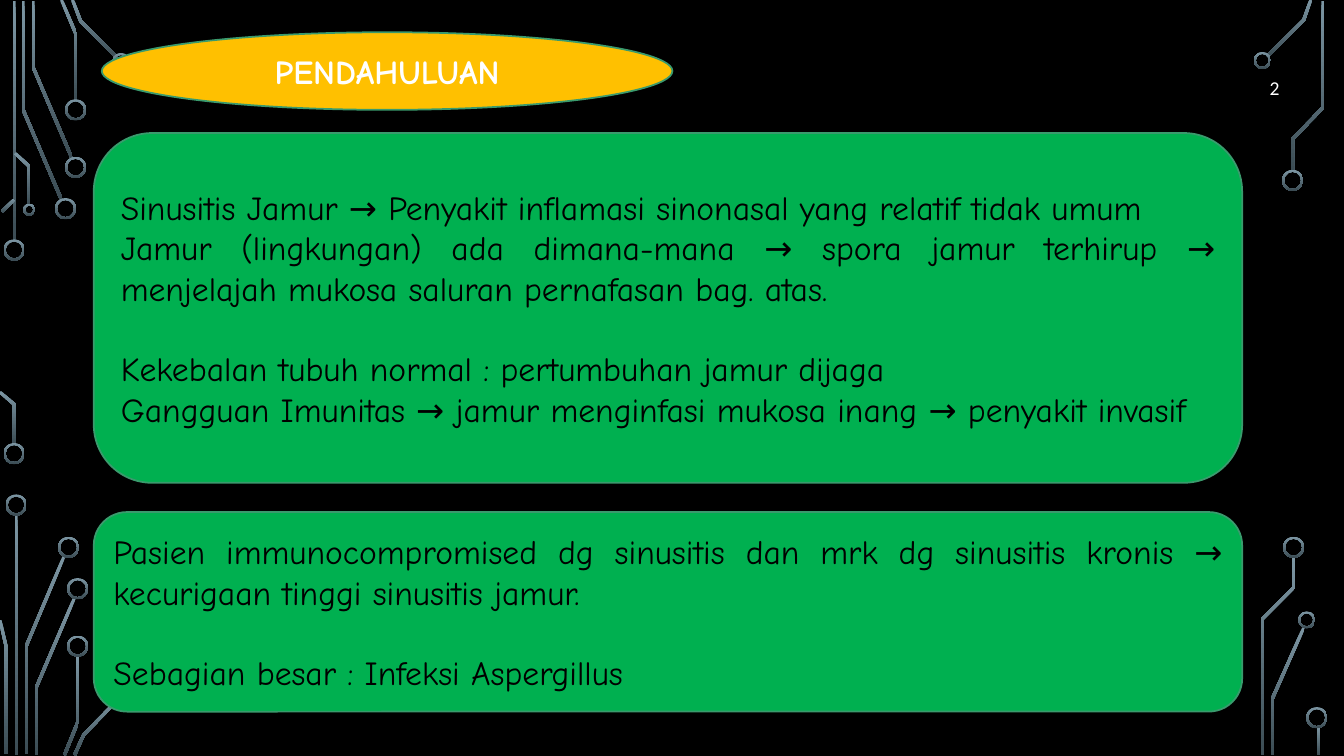
from dataclasses import dataclass
from math import hypot
from typing import NamedTuple

from pptx import Presentation
from pptx.dml.color import RGBColor
from pptx.dml.fill import FillFormat
from pptx.enum.shapes import MSO_SHAPE as Preset
from pptx.enum.text import MSO_ANCHOR as Anchor, PP_ALIGN as Align
from pptx.shapes.autoshape import Shape
from pptx.slide import Slide
from pptx.text.text import TextFrame
from pptx.util import Inches, Pt

COLUMNS, ROWS = 13.33, 7.5
CELL = Inches(1)
TRACK_WIDTH = 0.03
RING_BAND = 0.02


@dataclass(frozen=True)
class Theme:
    background: str = "000000"
    track_top: str = "7C96A3"
    track_bottom: str = "3B4C54"
    panel: str = "00B050"
    title: str = "FFC000"
    outline: str = "3A9A6D"
    dark_text: str = "000000"
    light_text: str = "FFFFFF"
    body_font: str = "Comic Neue"
    number_font: str = "Calibri"
    body_size: float = 24
    number_size: float = 14
    outline_width: float = 1.25
    section_gap: float = 28.8


class Point(NamedTuple):
    column: float
    row: float


class Area(NamedTuple):
    column: float
    row: float
    columns: float
    rows: float


class Ring(NamedTuple):
    column: float
    row: float
    diameter: float = 0.21


@dataclass(frozen=True)
class TextStyle:
    font: str
    size: float
    color: str
    align: Align
    bold: bool = False


@dataclass(frozen=True)
class Panel:
    """A filled shape whose text is split into sections of paragraphs."""
    preset: Preset
    area: Area
    fill: str
    style: TextStyle
    sections: list[list[str]]


THEME = Theme()
BODY = TextStyle(THEME.body_font, THEME.body_size, THEME.dark_text, Align.JUSTIFY)
TITLE = TextStyle(THEME.body_font, THEME.body_size, THEME.light_text, Align.CENTER, True)
NUMBER = TextStyle(THEME.number_font, THEME.number_size, THEME.light_text, Align.RIGHT)
NUMBER_AREA = Area(11.66, 0.54, 1.13, 0.65)

TRACKS = [
    # top left
    [(0.14, 0.01), (0.14, 2.4)],
    [(0.23, 0.01), (0.23, 1.09), (0.61, 1.98)],
    [(0.33, 0.01), (0.33, 0.67), (0.71, 1.56)],
    [(0.61, 0), (0.75, 0.33), (0.75, 1)],
    [(0.72, 0), (0.8, 0.21), (1.16, 0.57)],
    [(0.02, 2.1), (0.14, 1.98)],
    [(0.15, 1.52), (0.29, 1.65), (0.29, 2.03)],
    # bottom left
    [(0, 3.89), (0.14, 4.01), (0.14, 4.41)],
    [(0.16, 5.1), (0.16, 7.49)],
    [(0.64, 5.51), (0.26, 6.41), (0.26, 7.48)],
    [(0, 6.15), (0.06, 6.41), (0.06, 7.48)],
    [(0.74, 5.93), (0.36, 6.82), (0.36, 7.49)],
    [(0.77, 6.5), (0.77, 7.17), (0.64, 7.49)],
    [(1.18, 6.93), (0.83, 7.29), (0.74, 7.49)],
    # right
    [(13, 0), (12.93, 0.2), (12.57, 0.56)],
    [(13.12, 0.01), (13.12, 1.07), (12.82, 1.38), (12.82, 1.69)],
    [(12.93, 6.23), (12.62, 6.93), (12.62, 7.49)],
    [(12.83, 5.52), (12.83, 5.83), (12.52, 6.14), (12.52, 7.49)],
    [(13.08, 7.21), (13.08, 7.49)],
]
RINGS = [
    Ring(0.14, 2.48), Ring(0.14, 4.5), Ring(0.65, 2.07), Ring(0.75, 1.66),
    Ring(0.75, 1.09), Ring(1.2, 0.61, 0.17), Ring(0.29, 2.08, 0.12),
    Ring(0.16, 5.01), Ring(0.68, 5.43), Ring(0.77, 5.84), Ring(0.77, 6.41),
    Ring(12.52, 0.6, 0.17), Ring(12.82, 1.79), Ring(12.96, 6.15, 0.17),
    Ring(12.83, 5.43), Ring(13.06, 7.12),
]
PANELS = [
    Panel(Preset.ROUNDED_RECTANGLE, Area(0.93, 1.32, 11.39, 3.47), THEME.panel, BODY, [
        ["Sinusitis Jamur → Penyakit inflamasi sinonasal yang relatif tidak umum",
         "Jamur (lingkungan) ada dimana-mana → spora jamur terhirup → "
         "menjelajah mukosa saluran pernafasan bag. atas."],
        ["Kekebalan tubuh normal : pertumbuhan jamur dijaga",
         "Gangguan Imunitas → jamur menginfasi mukosa inang → penyakit invasif"],
    ]),
    Panel(Preset.ROUNDED_RECTANGLE, Area(0.93, 5.08, 11.39, 1.98), THEME.panel, BODY, [
        ["Pasien immunocompromised dg sinusitis dan mrk dg sinusitis kronis → "
         "kecurigaan tinggi sinusitis jamur."],
        ["Sebagian besar : Infeksi Aspergillus"],
    ]),
    Panel(Preset.OVAL, Area(1.01, 0.32, 5.66, 0.77), THEME.title, TITLE, [["PENDAHULUAN"]]),
]


def cells(*lengths: float) -> list[int]:
    return [round(length * CELL) for length in lengths]


def paint(fill: FillFormat, color: str) -> None:
    fill.solid()
    fill.fore_color.rgb = RGBColor.from_string(color)


def finish_circuit(shape: Shape) -> None:
    shape.shadow.inherit = False
    shape.line.fill.background()
    shape.fill.gradient()
    shape.fill.gradient_angle = 270
    for stop, color in zip(shape.fill.gradient_stops, (THEME.track_top, THEME.track_bottom)):
        stop.color.rgb = RGBColor.from_string(color)


def track_side(points: list[Point], offset: float) -> list[Point]:
    """Shift a centre line sideways, with mitred corners."""
    normals = []
    for start, end in zip(points, points[1:]):
        across, down = end.column - start.column, end.row - start.row
        length = hypot(across, down)
        normals.append((-down / length, across / length))
    side = []
    for point, (ax, ay), (bx, by) in zip(points, normals[:1] + normals, normals + normals[-1:]):
        scale = offset / (1 + ax * bx + ay * by)
        side.append(Point(point.column + (ax + bx) * scale, point.row + (ay + by) * scale))
    return side


def draw_track(slide: Slide, points: list[Point]) -> None:
    half = TRACK_WIDTH / 2
    outline = track_side(points, half) + track_side(points, -half)[::-1]
    start, *others = [tuple(cells(*point)) for point in outline]
    builder = slide.shapes.build_freeform(*start)
    builder.add_line_segments(others, close=True)
    finish_circuit(builder.convert_to_shape())


def draw_ring(slide: Slide, ring: Ring) -> None:
    radius = ring.diameter / 2
    area = Area(ring.column - radius, ring.row - radius, ring.diameter, ring.diameter)
    shape = slide.shapes.add_shape(Preset.DONUT, *cells(*area))
    shape.adjustments[0] = RING_BAND / ring.diameter
    finish_circuit(shape)


def write(text_frame: TextFrame, sections: list[list[str]], style: TextStyle) -> None:
    text_frame.word_wrap = True
    text_frame.vertical_anchor = Anchor.MIDDLE
    text_frame.text = "\n".join(line for section in sections for line in section)
    openings = [section[0] for section in sections[1:]]
    for paragraph in text_frame.paragraphs:
        paragraph.alignment = style.align
        if paragraph.text in openings:
            paragraph.space_before = Pt(THEME.section_gap)
        for run in paragraph.runs:
            run.font.name = style.font
            run.font.size = Pt(style.size)
            run.font.bold = style.bold
            run.font.color.rgb = RGBColor.from_string(style.color)


def draw_panel(slide: Slide, panel: Panel) -> None:
    shape = slide.shapes.add_shape(panel.preset, *cells(*panel.area))
    shape.shadow.inherit = False
    paint(shape.fill, panel.fill)
    paint(shape.line.fill, THEME.outline)
    shape.line.width = Pt(THEME.outline_width)
    write(shape.text_frame, panel.sections, panel.style)


def main() -> None:
    presentation = Presentation()
    presentation.slide_width, presentation.slide_height = cells(COLUMNS, ROWS)
    slide = presentation.slides.add_slide(presentation.slide_layouts[6])
    paint(slide.background.fill, THEME.background)
    for track in TRACKS:
        draw_track(slide, [Point(*point) for point in track])
    for ring in RINGS:
        draw_ring(slide, ring)
    number = slide.shapes.add_textbox(*cells(*NUMBER_AREA))
    write(number.text_frame, [["2"]], NUMBER)
    for panel in PANELS:
        draw_panel(slide, panel)
    presentation.save("out.pptx")


if __name__ == "__main__":
    main()
